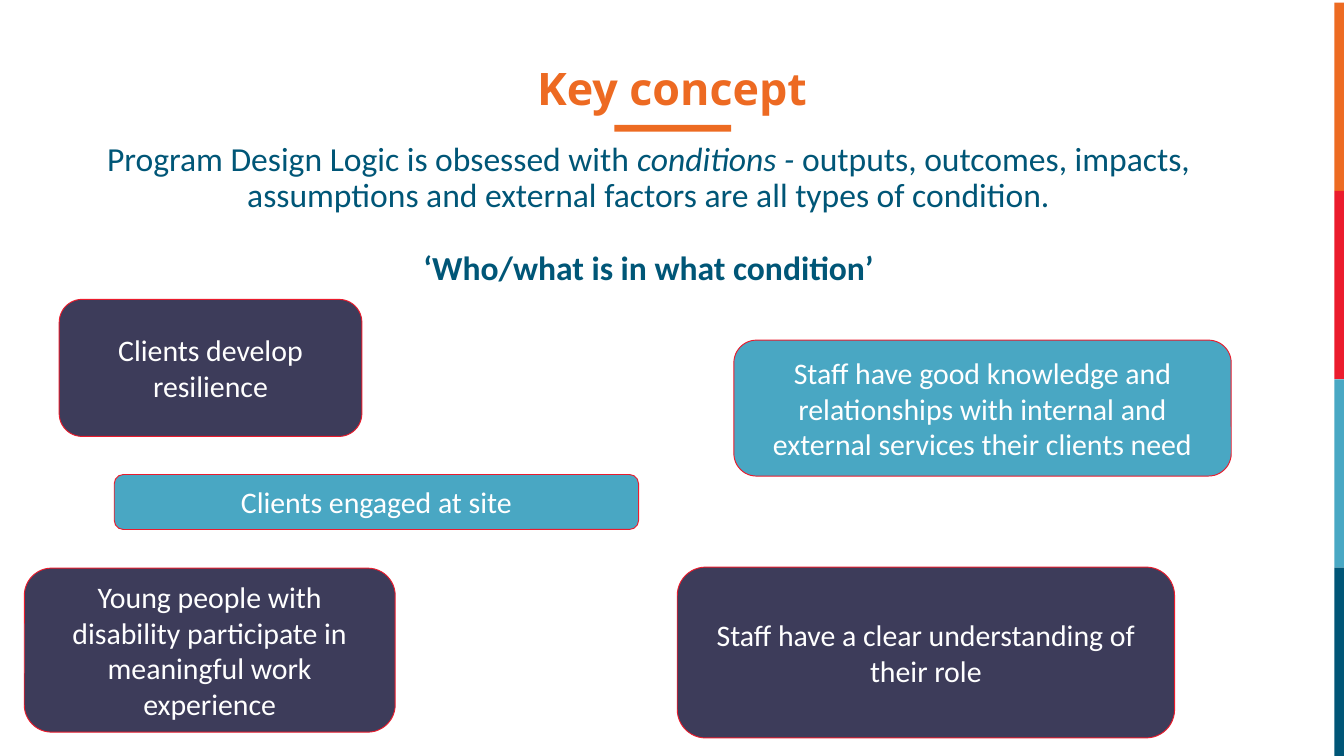
from pptx import Presentation
from pptx.dml.color import RGBColor
from pptx.enum.shapes import MSO_SHAPE
from pptx.enum.text import MSO_ANCHOR, MSO_AUTO_SIZE, PP_ALIGN
from pptx.util import Cm, Pt

ORANGE, RED, TEAL, BLUE = "ED6B22", "EB1C2D", "49A8C4", "005677"
TITLE_ORANGE, BOX_TEAL, BOX_PURPLE, BOX_EDGE = "ED6A22", "49A7C3", "3D3C5A", "EA1C2D"
WHITE = "FFFFFF"

CONDITIONS = [
    ("Clients engaged at site", BOX_TEAL, (2.16, 8.97, 9.91, 1.04)),
    ("Young people with disability participate in meaningful work experience",
     BOX_PURPLE, (0.46, 10.74, 7.01, 3.1)),
    ("Staff have good knowledge and relationships with internal and external "
     "services their clients need", BOX_TEAL, (13.87, 6.43, 9.4, 2.57)),
    ("Staff have a clear understanding of their role",
     BOX_PURPLE, (12.8, 10.72, 9.4, 3.23)),
    ("Clients develop resilience", BOX_PURPLE, (1.12, 5.66, 5.72, 2.59)),
]

INTRO = [
    [("Program Design Logic is obsessed with ", {}),
     ("conditions - ", {"italic": True}),
     ("outputs, outcomes, impacts, assumptions and external factors "
      "are all types of condition.", {})],
    [("‘Who/what is in what condition’", {"bold": True})],
]


def color(hex_value):
    return RGBColor.from_string(hex_value)


def apply(target, values):
    for attribute, value in values.items():
        setattr(target, attribute, value)


class ConceptSlide:
    body_font = {"name": "Calibri", "size": Pt(18)}
    box_font = {"name": "Calibri", "size": Pt(16)}
    title_font = {"name": "Open Sans", "size": Pt(24), "bold": True}
    centred = {"alignment": PP_ALIGN.CENTER}
    tight = {"alignment": PP_ALIGN.CENTER, "line_spacing": 0.9}

    def __init__(self, slide):
        self.slide = slide

    def add_runs(self, paragraph, runs, font, ink, layout):
        apply(paragraph, layout)
        for text, emphasis in runs:
            run = paragraph.add_run()
            run.text = text
            apply(run.font, font | emphasis)
            run.font.color.rgb = color(ink)

    def title(self, text, area):
        heading = self.slide.shapes.title
        apply(heading, dict(zip(("left", "top", "width", "height"), map(Cm, area))))
        frame = heading.text_frame
        apply(frame, {"vertical_anchor": MSO_ANCHOR.TOP, "margin_top": Cm(0.08),
                      "margin_bottom": 0, "auto_size": MSO_AUTO_SIZE.NONE})
        self.add_runs(frame.paragraphs[0], [(text, {})], self.title_font,
                      TITLE_ORANGE, self.tight | {"space_before": Pt(0)})

    def paragraphs(self, contents, area, gap):
        frame = self.slide.shapes.add_textbox(*map(Cm, area)).text_frame
        frame.word_wrap = True
        for index, runs in enumerate(contents):
            paragraph = frame.add_paragraph() if index else frame.paragraphs[0]
            spacing = {"space_before": Pt(gap if index else 0)}
            self.add_runs(paragraph, runs, self.body_font, BLUE, self.tight | spacing)

    def block(self, fill, area, preset=MSO_SHAPE.RECTANGLE):
        shape = self.slide.shapes.add_shape(preset, *map(Cm, area))
        shape.shadow.inherit = False
        shape.fill.solid()
        shape.fill.fore_color.rgb = color(fill)
        shape.line.fill.background()
        return shape

    def condition(self, text, fill, area):
        box = self.block(fill, area, MSO_SHAPE.ROUNDED_RECTANGLE)
        box.line.color.rgb = color(BOX_EDGE)
        box.line.width = Pt(0.5)
        frame = box.text_frame
        apply(frame, {"word_wrap": True, "vertical_anchor": MSO_ANCHOR.MIDDLE})
        self.add_runs(frame.paragraphs[0], [(text, {})], self.box_font, WHITE, self.centred)


def main():
    deck = Presentation()
    apply(deck, {"slide_width": Cm(25.4), "slide_height": Cm(14.29)})
    page = ConceptSlide(deck.slides.add_slide(deck.slide_layouts[5]))

    band_height = 3.56
    for index, fill in enumerate((ORANGE, RED, TEAL, BLUE)):
        page.block(fill, (25.22, 0.05 + index * band_height, 0.18, band_height))
    page.block(ORANGE, (11.61, 2.36, 2.21, 0.13))

    page.title("Key concept", (0, 1.19, 25.4, 0.97))
    page.paragraphs(INTRO, (1.3, 2.57, 21.92, 3.3), gap=19.5)
    for text, fill, area in CONDITIONS:
        page.condition(text, fill, area)

    deck.save("out.pptx")


if __name__ == "__main__":
    main()
